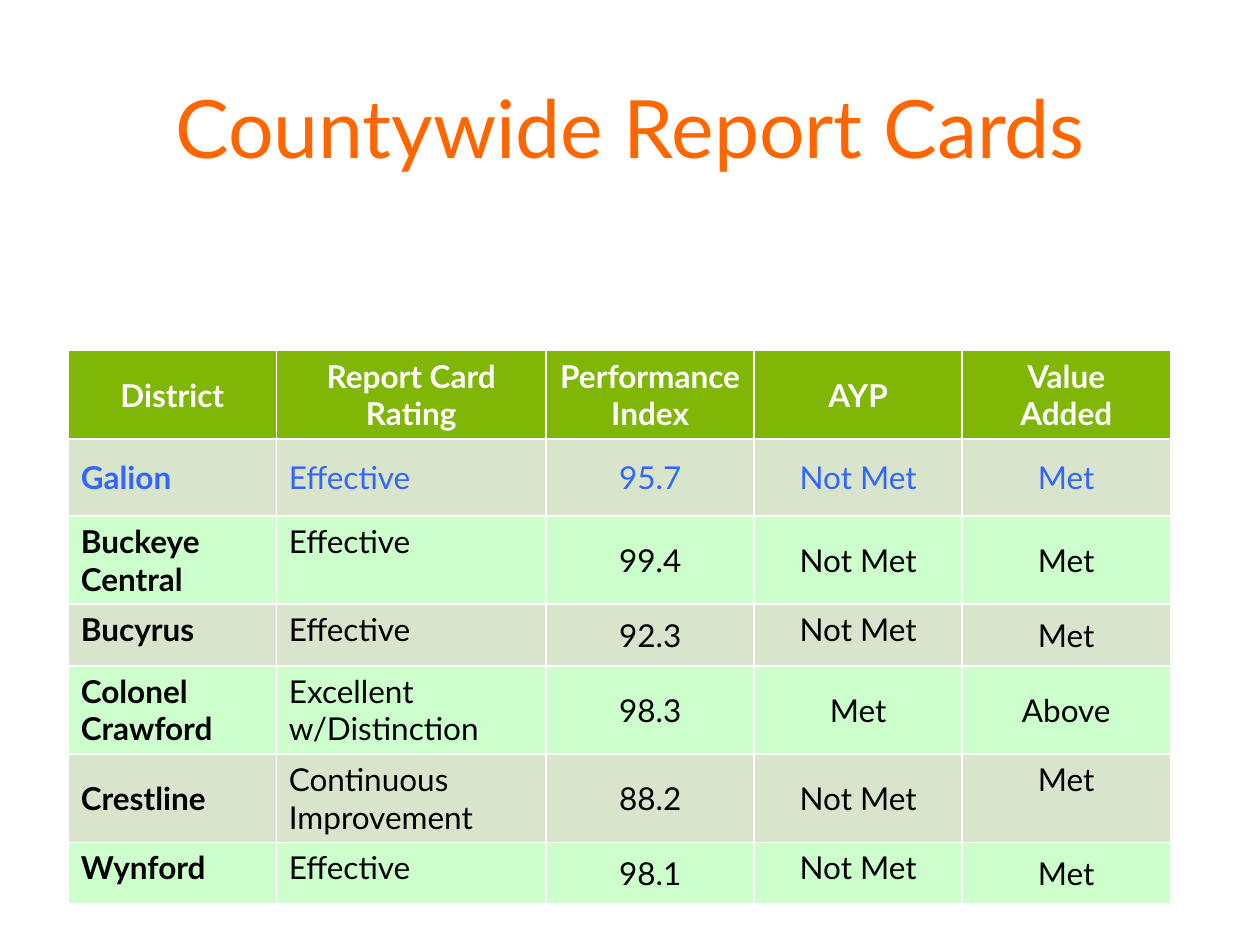
from pptx import Presentation
from pptx.dml.color import RGBColor
from pptx.enum.text import MSO_ANCHOR, PP_ALIGN
from pptx.util import Pt

TOP, MIDDLE = MSO_ANCHOR.TOP, MSO_ANCHOR.MIDDLE
LEFT, CENTER = PP_ALIGN.LEFT, PP_ALIGN.CENTER

FONT = "Lato"
ORANGE = RGBColor(0xFF, 0x66, 0x00)
WHITE = RGBColor(0xFF, 0xFF, 0xFF)
BLACK = RGBColor(0x00, 0x00, 0x00)
BLUE = RGBColor(0x33, 0x66, 0xFF)
GREEN = RGBColor(0x80, 0xB6, 0x06)
BANDS = (RGBColor(0xD8, 0xE5, 0xCC), RGBColor(0xCC, 0xFF, 0xCC))

TITLE = "Countywide Report Cards"
HEADER = ("District", "Report Card Rating", "Performance\nIndex", "AYP", "Value\nAdded")
DISTRICTS = [
    ("Galion", "Effective", "95.7", "Not Met", "Met"),
    ("Buckeye Central", "Effective", "99.4", "Not Met", "Met"),
    ("Bucyrus", "Effective", "92.3", "Not Met", "Met"),
    ("Colonel Crawford", "Excellent w/Distinction", "98.3", "Met", "Above"),
    ("Crestline", "Continuous Improvement", "88.2", "Not Met", "Met"),
    ("Wynford", "Effective", "98.1", "Not Met", "Met"),
]
HIGHLIGHT = "Galion"
# Columns whose text sits at the top of the cell, by district
TOP_COLUMNS = {
    "Buckeye Central": (0, 1),
    "Bucyrus": (0, 1, 3),
    "Colonel Crawford": (0, 1),
    "Crestline": (1, 4),
    "Wynford": (0, 1, 3),
}
COLUMN_WIDTHS = (118.9, 154.2, 118.9, 118.9, 118.9)
ROW_HEIGHTS = (44, 44) + (35.2,) * 5


def fill_cell(cell, text, fill, color, bold, align, anchor):
    cell.fill.solid()
    cell.fill.fore_color.rgb = fill
    cell.vertical_anchor = anchor
    cell.text = text
    for p in cell.text_frame.paragraphs:
        p.alignment = align
        p.font.name, p.font.size = FONT, Pt(18)
        p.font.bold = bold
        p.font.color.rgb = color


prs = Presentation()
prs.slide_width, prs.slide_height = Pt(720), Pt(540)
s = prs.slides.add_slide(prs.slide_layouts[5])

title = s.shapes.title
title.left, title.top, title.width, title.height = Pt(36), Pt(27), Pt(648), Pt(90)
title.text_frame.text = TITLE
title.text_frame.vertical_anchor = MIDDLE
p = title.text_frame.paragraphs[0]
p.alignment = CENTER
p.font.name, p.font.size = FONT, Pt(46)
p.font.color.rgb = ORANGE

table = s.shapes.add_table(
    len(ROW_HEIGHTS), len(COLUMN_WIDTHS), Pt(39), Pt(200.4),
    Pt(sum(COLUMN_WIDTHS)), Pt(sum(ROW_HEIGHTS))).table
for column, width in zip(table.columns, COLUMN_WIDTHS):
    column.width = Pt(width)
for row, height in zip(table.rows, ROW_HEIGHTS):
    row.height = Pt(height)

for c, text in enumerate(HEADER):
    fill_cell(table.cell(0, c), text, GREEN, WHITE, True, CENTER, MIDDLE)
for r, values in enumerate(DISTRICTS):
    district = values[0]
    color = BLUE if district == HIGHLIGHT else BLACK
    for c, text in enumerate(values):
        anchor = TOP if c in TOP_COLUMNS.get(district, ()) else MIDDLE
        fill_cell(table.cell(r + 1, c), text, BANDS[r % 2], color,
                  c == 0, LEFT if c < 2 else CENTER, anchor)

prs.save("out.pptx")
